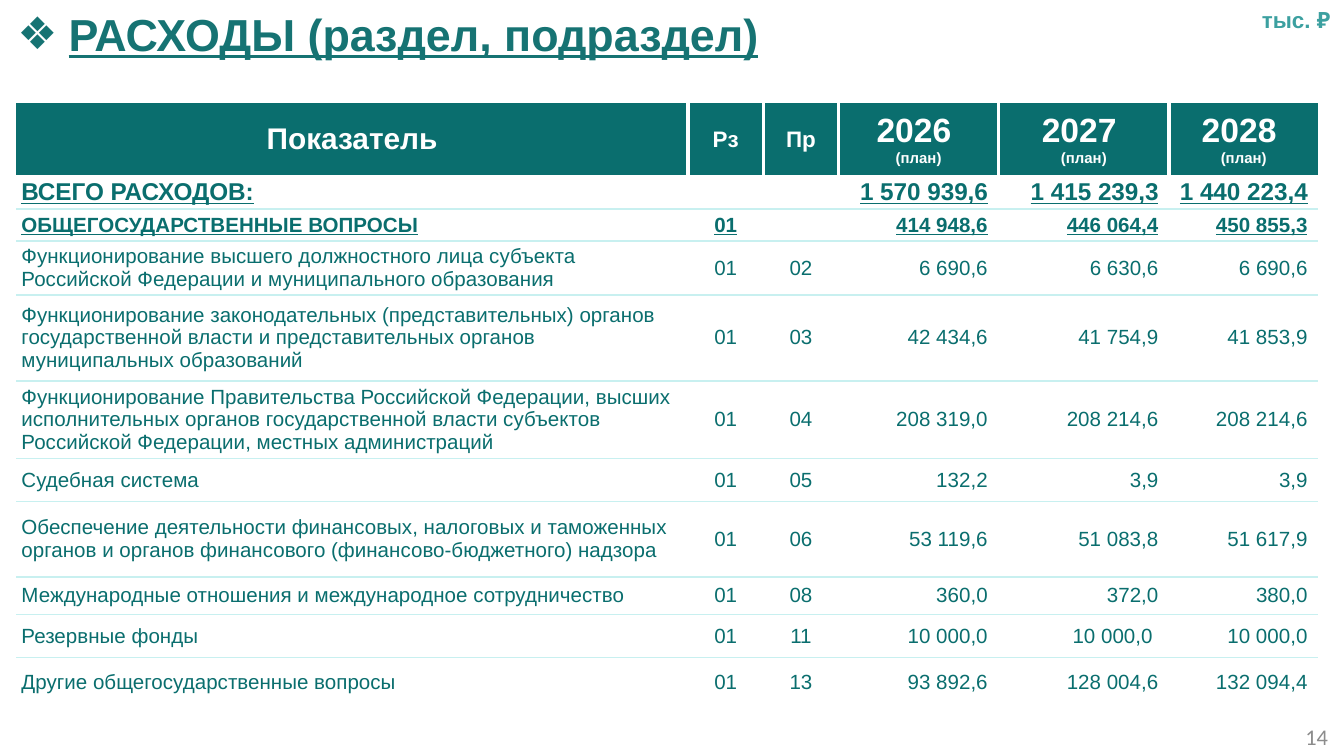
import dataclasses

import lxml.etree
import pptx
import pptx.dml.color
import pptx.enum.text
import pptx.oxml.ns
import pptx.util

Inches = pptx.util.Inches
Align = pptx.enum.text.PP_ALIGN
Anchor = pptx.enum.text.MSO_ANCHOR
AutoSize = pptx.enum.text.MSO_AUTO_SIZE


@dataclasses.dataclass(frozen=True)
class Theme:
    font: str = "Arial"
    number_font: str = "Calibri"
    title: str = "167373"
    teal: str = "0A6E6E"
    unit: str = "3CA0A0"
    rule: str = "C8F0F0"
    white: str = "FFFFFF"
    gray: str = "8C8C8C"
    title_size: int = 24
    year_size: int = 18
    header_size: int = 16
    total_size: int = 13
    small_size: int = 12
    body_size: int = 11
    plan_size: int = 8


THEME = Theme()
NO_GRID_STYLE = "{2D5ABB26-0587-4C30-8999-92F81FD0307C}"

COLUMN_WIDTHS = [5, 0.56, 0.56, 1.19, 1.27, 1.11]
ROW_HEIGHTS = [0.53, 0.25, 0.24, 0.4, 0.64, 0.58, 0.32, 0.56, 0.28, 0.32, 0.37]
HEADER = ["Показатель", "Рз", "Пр", "2026 ", "2027 ", "2028 "]
EXPENSES = [
    ("ВСЕГО РАСХОДОВ:", "", "", "1 570 939,6", "1 415 239,3", "1 440 223,4"),
    ("ОБЩЕГОСУДАРСТВЕННЫЕ ВОПРОСЫ", "01", "", "414 948,6", "446 064,4", "450 855,3"),
    ("Функционирование высшего должностного лица субъекта Российской Федерации "
     "и муниципального образования", "01", "02", "6 690,6", "6 630,6", "6 690,6"),
    ("Функционирование законодательных (представительных) органов государственной "
     "власти и представительных органов муниципальных образований",
     "01", "03", "42 434,6", "41 754,9", "41 853,9"),
    ("Функционирование Правительства Российской Федерации, высших исполнительных "
     "органов государственной власти субъектов Российской Федерации, местных "
     "администраций", "01", "04", "208 319,0", "208 214,6", "208 214,6"),
    ("Судебная система", "01", "05", "132,2", "3,9", "3,9"),
    ("Обеспечение деятельности финансовых, налоговых и таможенных органов и органов "
     "финансового (финансово-бюджетного) надзора",
     "01", "06", "53 119,6", "51 083,8", "51 617,9"),
    ("Международные отношения и международное сотрудничество",
     "01", "08", "360,0", "372,0", "380,0"),
    ("Резервные фонды", "01", "11", "10 000,0", "10 000,0 ", "10 000,0"),
    ("Другие общегосударственные вопросы", "01", "13", "93 892,6", "128 004,6", "132 094,4"),
]


def write(paragraph, text, *, size, color, font=THEME.font, bold=False,
          underline=False, align=Align.LEFT):
    """Put formatted text into a paragraph."""
    paragraph.alignment = align
    if not text:
        # An empty cell still needs a type size to keep its row low
        paragraph._p.get_or_add_endParaRPr().set("sz", str(size * 100))
        return
    run = paragraph.add_run()
    run.text = text
    run.font.name = font
    run.font.size = pptx.util.Pt(size)
    run.font.bold = bold
    run.font.underline = underline
    run.font.color.rgb = pptx.dml.color.RGBColor.from_string(color)


def add_element(parent, tag, **attributes):
    return lxml.etree.SubElement(parent, pptx.oxml.ns.qn(tag), attributes)


class SlideBuilder:
    def __init__(self, presentation, theme):
        self.theme = theme
        self.slide = presentation.slides.add_slide(presentation.slide_layouts[5])

    def title(self, text, left, top, width, height):
        shape = self.slide.shapes.title
        shape.left, shape.top = Inches(left), Inches(top)
        shape.width, shape.height = Inches(width), Inches(height)
        frame = shape.text_frame
        frame.word_wrap = True
        frame.auto_size = AutoSize.SHAPE_TO_FIT_TEXT
        frame.vertical_anchor = Anchor.TOP
        paragraph = frame.paragraphs[0]
        properties = paragraph._p.get_or_add_pPr()
        properties.set("marL", str(Inches(0.38)))
        properties.set("indent", str(Inches(-0.38)))
        add_element(properties, "a:buFont", typeface=self.theme.font)
        add_element(properties, "a:buChar", char="❖")
        write(paragraph, text, size=self.theme.title_size, color=self.theme.title,
              bold=True, underline=True)

    def label(self, text, left, top, width, height, *, wrap=True,
              anchor=Anchor.TOP, **text_format):
        shape = self.slide.shapes.add_textbox(
            Inches(left), Inches(top), Inches(width), Inches(height))
        shape.text_frame.word_wrap = wrap
        shape.text_frame.vertical_anchor = anchor
        write(shape.text_frame.paragraphs[0], text, **text_format)

    def table(self, left, top):
        table = self.slide.shapes.add_table(
            len(ROW_HEIGHTS), len(COLUMN_WIDTHS), Inches(left), Inches(top),
            Inches(sum(COLUMN_WIDTHS)), Inches(sum(ROW_HEIGHTS))).table
        table.first_row = table.horz_banding = False
        table._tbl.tblPr.find(pptx.oxml.ns.qn("a:tableStyleId")).text = NO_GRID_STYLE
        for column, width in zip(table.columns, COLUMN_WIDTHS):
            column.width = Inches(width)
        for row, height in zip(table.rows, ROW_HEIGHTS):
            row.height = Inches(height)
        for column, text in enumerate(HEADER):
            self.header_cell(table.cell(0, column), text, column)
        for row, values in enumerate(EXPENSES, start=1):
            for column, text in enumerate(values):
                self.body_cell(table.cell(row, column), text, row, column)

    def header_cell(self, cell, text, column):
        is_year = column >= 3
        side = 0 if is_year else 0.1
        self.margins(cell, side, 0.05, side, 0.05)
        cell.fill.solid()
        cell.fill.fore_color.rgb = pptx.dml.color.RGBColor.from_string(self.theme.teal)
        style = dict(color=self.theme.white, bold=True, align=Align.CENTER)
        sizes = [self.theme.header_size] + [self.theme.small_size] * 2
        size = self.theme.year_size if is_year else sizes[column]
        write(cell.text_frame.paragraphs[0], text, size=size, **style)
        if is_year:
            write(cell.text_frame.add_paragraph(), "(план)",
                  size=self.theme.plan_size, **style)
        sides = (["L"] if column > 0 else []) + (["R"] if column < len(HEADER) - 1 else [])
        self.borders(cell, sides, self.theme.white, 2.25)

    def body_cell(self, cell, text, row, column):
        is_amount = column >= 3
        self.margins(cell, 0.04 if column == 0 else 0, 0, 0.08 if is_amount else 0, 0)
        cell.fill.background()
        align = Align.LEFT if column == 0 else Align.RIGHT if is_amount else Align.CENTER
        is_summary = row <= 2
        write(cell.text_frame.paragraphs[0], text, color=self.theme.teal, align=align,
              size=self.theme.total_size if row == 1 else self.theme.body_size,
              bold=is_summary, underline=is_summary)
        # Rules run between body rows only
        sides = (["T"] if row > 1 else []) + (["B"] if row < len(EXPENSES) else [])
        self.borders(cell, sides, self.theme.rule, 1)

    def margins(self, cell, left, top, right, bottom):
        cell.margin_left, cell.margin_right = Inches(left), Inches(right)
        cell.margin_top, cell.margin_bottom = Inches(top), Inches(bottom)
        cell.vertical_anchor = Anchor.MIDDLE

    def borders(self, cell, sides, color, width):
        properties = cell._tc.get_or_add_tcPr()
        for index, side in enumerate(sides):
            line = add_element(properties, f"a:ln{side}", w=str(pptx.util.Pt(width)))
            add_element(add_element(line, "a:solidFill"), "a:srgbClr", val=color)
            properties.insert(index, line)  # borders come before the fill


def main():
    presentation = pptx.Presentation()
    # Widescreen, 16 to 9
    presentation.slide_width = Inches(10)
    presentation.slide_height = Inches(10) * 9 // 16
    builder = SlideBuilder(presentation, THEME)

    # Slide number, expense table, unit and heading
    builder.label("14", 7.65, 5.33, 2.33, 0.3, anchor=Anchor.MIDDLE,
                  size=THEME.small_size, color=THEME.gray, font=THEME.number_font,
                  align=Align.RIGHT)
    builder.table(0.12, 0.77)
    builder.label("тыс. ₽", 9.29, 0, 0.71, 0.3, wrap=False,
                  size=THEME.small_size, color=THEME.unit, bold=True)
    builder.title("РАСХОДЫ (раздел, подраздел)", 0.03, 0, 5.91, 0.5)

    presentation.save("out.pptx")


if __name__ == "__main__":
    main()
